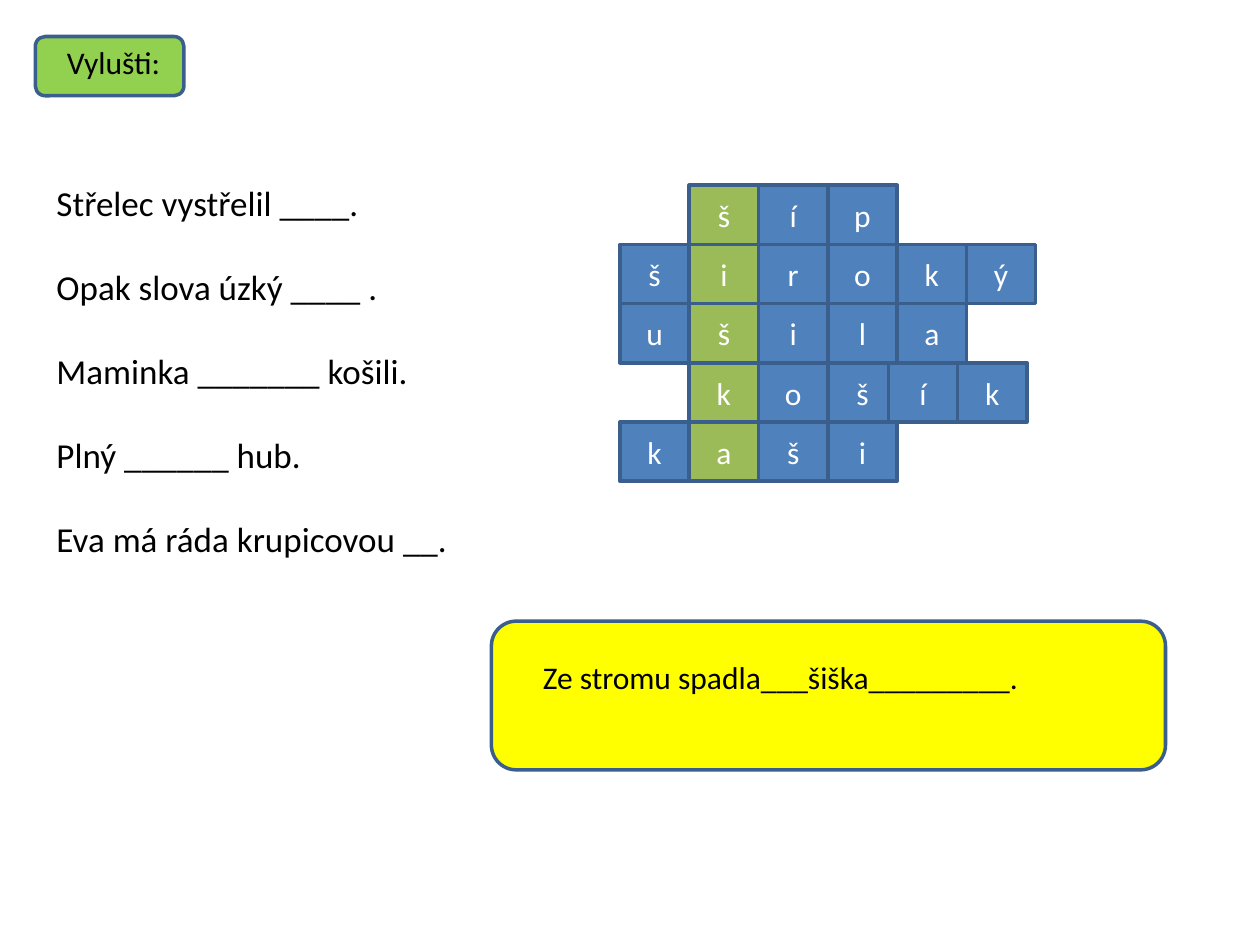
from pptx import Presentation
from pptx.dml.color import RGBColor
from pptx.enum.shapes import MSO_SHAPE
from pptx.enum.text import MSO_ANCHOR, MSO_AUTO_SIZE, PP_ALIGN
from pptx.util import Inches, Pt

RECTANGLE = MSO_SHAPE.RECTANGLE
ROUNDED = MSO_SHAPE.ROUNDED_RECTANGLE
TOP, MIDDLE = MSO_ANCHOR.TOP, MSO_ANCHOR.MIDDLE
LEFT, CENTER = PP_ALIGN.LEFT, PP_ALIGN.CENTER
FIT_SHAPE = MSO_AUTO_SIZE.SHAPE_TO_FIT_TEXT
TITLE_ONLY = 5

COLORS = {
    "text": "000000",
    "letter": "FFFFFF",
    "outline": "3A5F8C",
    "badge": "92D050",
    "answer": "FFFF00",
    "cell": "4F81BD",
    "key": "9BBB59",
}

CLUES = [
    "Střelec vystřelil ____.",
    "Opak slova úzký ____ .",
    "Maminka _______ košili.",
    "Plný ______ hub.",
    "Eva má ráda krupicovou __.",
]

# Each word with the column of its first letter
WORDS = [("šíp", 1), ("široký", 0), ("ušila", 0), ("košík", 1), ("kaši", 0)]
KEY_COLUMN = 1
GRID_LEFT, GRID_TOP = 4.92, 1.47
CELL_WIDTH, CELL_HEIGHT = 0.55, 0.47
# The end of "košík" sits slightly closer to its start
SHIFTED_ROW, SHIFTED_FROM, SHIFT = 3, 4, -0.07


class Worksheet:
    font_name = "Calibri"
    line_width = Pt(2)

    def __init__(self, page):
        self.page = page

    def set_text(self, frame, lines, size, color="text", align=LEFT, anchor=TOP, gap=0):
        frame.word_wrap = True
        frame.vertical_anchor = anchor
        frame.text = "\n".join(lines)
        for index, para in enumerate(frame.paragraphs):
            para.alignment = align
            para.space_before = Pt(gap if index else 0)
            para.font.name = self.font_name
            para.font.size = Pt(size)
            para.font.color.rgb = RGBColor.from_string(COLORS[color])

    def panel(self, kind, left, top, width, height, fill):
        shape = self.page.shapes.add_shape(
            kind, Inches(left), Inches(top), Inches(width), Inches(height))
        shape.shadow.inherit = False
        shape.fill.solid()
        shape.fill.fore_color.rgb = RGBColor.from_string(COLORS[fill])
        shape.line.color.rgb = RGBColor.from_string(COLORS["outline"])
        shape.line.width = self.line_width
        return shape

    def cell(self, left, top, letter, fill):
        shape = self.panel(RECTANGLE, left, top, CELL_WIDTH, CELL_HEIGHT, fill)
        self.set_text(shape.text_frame, [letter], 18, "letter", CENTER, MIDDLE)

    def text(self, left, top, width, height, lines, size, gap=0):
        box = self.page.shapes.add_textbox(
            Inches(left), Inches(top), Inches(width), Inches(height))
        self.set_text(box.text_frame, lines, size, gap=gap)
        box.text_frame.auto_size = FIT_SHAPE

    def title(self, left, top, width, height, wording):
        title = self.page.shapes.title
        title.left, title.top = Inches(left), Inches(top)
        title.width, title.height = Inches(width), Inches(height)
        self.set_text(title.text_frame, [wording], 18)
        title.text_frame.auto_size = FIT_SHAPE
        # Bring the title in front of the badge
        title.element.getparent().append(title.element)


def main():
    deck = Presentation()
    deck.slide_width, deck.slide_height = Inches(10), Inches(7.5)
    sheet = Worksheet(deck.slides.add_slide(deck.slide_layouts[TITLE_ONLY]))

    # Title on its badge
    sheet.panel(ROUNDED, 0.28, 0.29, 1.18, 0.47, "badge")
    sheet.title(0.43, 0.29, 2.52, 0.4, "Vylušti:")

    # Clues
    sheet.text(0.35, 1.39, 3.46, 3.13, CLUES, 20, gap=24)

    # Crossword
    for row, (word, start) in enumerate(WORDS):
        for column, letter in enumerate(word, start):
            left = GRID_LEFT + column * CELL_WIDTH
            if row == SHIFTED_ROW and column >= SHIFTED_FROM:
                left += SHIFT
            fill = "key" if column == KEY_COLUMN else "cell"
            sheet.cell(left, GRID_TOP + row * CELL_HEIGHT, letter, fill)

    # Answer sentence
    sheet.panel(ROUNDED, 3.9, 4.93, 5.35, 1.18, "answer")
    sheet.text(4.21, 5.17, 4.8, 0.4, ["Ze stromu spadla___šiška_________."], 18)

    deck.save("out.pptx")


if __name__ == "__main__":
    main()
